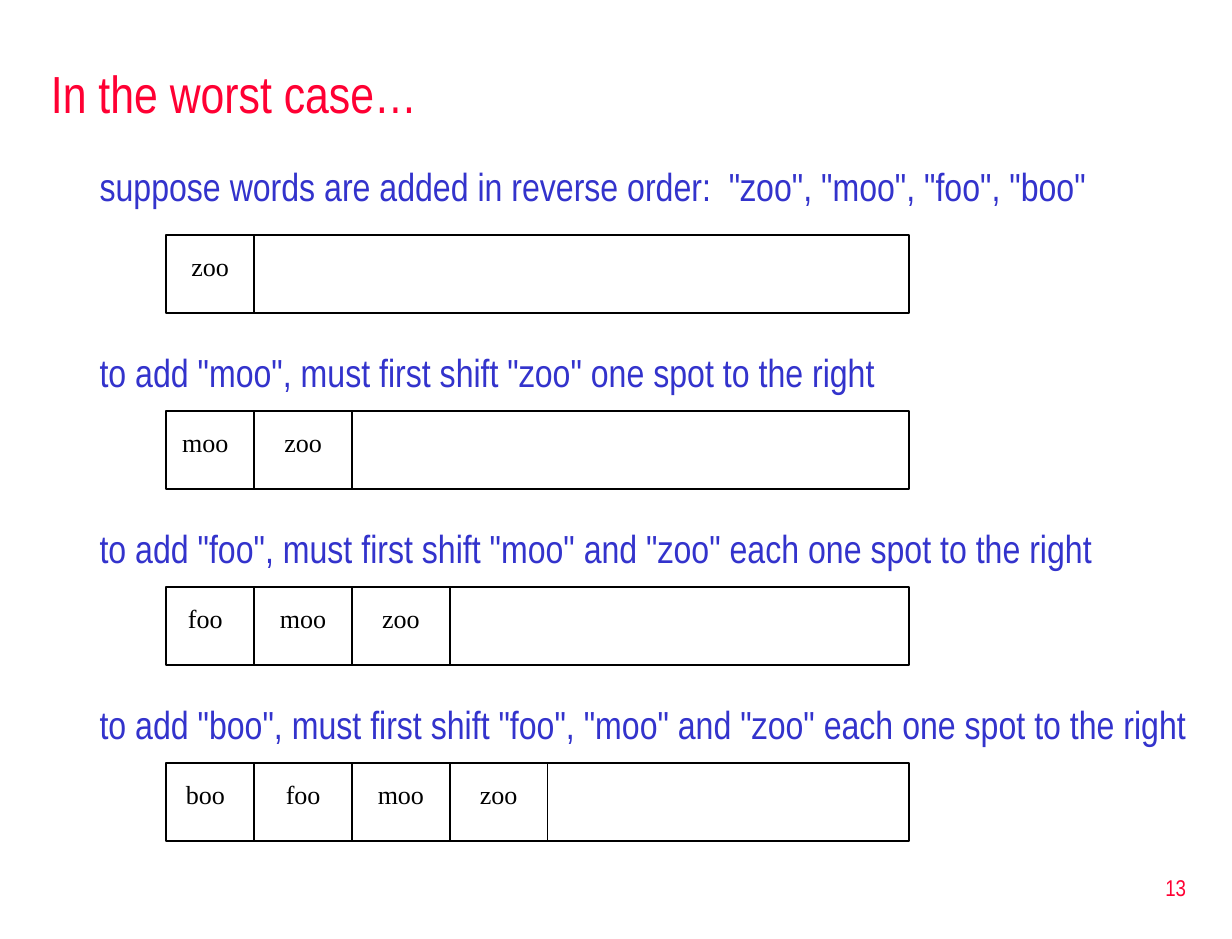
from dataclasses import dataclass

from lxml import etree
from pptx import Presentation
from pptx.dml.color import RGBColor
from pptx.enum.shapes import MSO_CONNECTOR, MSO_SHAPE
from pptx.enum.text import MSO_ANCHOR, PP_ALIGN
from pptx.oxml.ns import qn
from pptx.util import Emu, Pt

LEFT, MID, RIGHT = PP_ALIGN.LEFT, PP_ALIGN.CENTER, PP_ALIGN.RIGHT
TOP, CENTRE = MSO_ANCHOR.TOP, MSO_ANCHOR.MIDDLE
RECT, LINE = MSO_SHAPE.RECTANGLE, MSO_CONNECTOR.STRAIGHT
TITLE_ONLY = 5
SCALE = 9525  # EMU in one px, 96 px to the inch


@dataclass(frozen=True)
class Theme:
    red: str = "FF0033"
    blue: str = "3333CC"
    black: str = "000000"
    sans: str = "Arial Narrow"
    serif: str = "Times New Roman"
    head: int = 32
    body: int = 24
    cell: int = 16
    note: int = 14
    rule: int = 1


THEME = Theme()
BAR_X, BAR_W, BAR_H = 136, 608, 64
FIRST, PITCH = 72, 80  # width of the first cell, then of the others

# top of caption, top of bar, caption, words in the bar
STEPS = [
    (128, 192, 'suppose words are added in reverse order:  "zoo", "moo", "foo", "boo"',
     ["zoo"]),
    (280, 336, 'to add "moo", must first shift "zoo" one spot to the right',
     ["moo", "zoo"]),
    (424, 480, 'to add "foo", must first shift "moo" and "zoo" each one spot to the right',
     ["foo", "moo", "zoo"]),
    (568, 624, 'to add "boo", must first shift "foo", "moo" and "zoo" each one spot to the right',
     ["boo", "foo", "moo", "zoo"]),
]


def px(*sizes):
    return [Emu(size * SCALE) for size in sizes]


def write(shape, text, size=THEME.body, color=THEME.blue, font=THEME.sans,
          align=LEFT, anchor=TOP):
    frame = shape.text_frame
    frame.word_wrap = True
    frame.vertical_anchor = anchor
    frame.text = text
    para = frame.paragraphs[0]
    para.alignment = align
    style = para.runs[0].font
    style.size, style.name = Pt(size), font
    style.color.rgb = RGBColor.from_string(color)


def add_text(slide, box, text, **style):
    write(slide.shapes.add_textbox(*px(*box)), text, **style)


def add_title(slide, text):
    title = slide.shapes.title
    title.left, title.top, title.width, title.height = px(32, 40, 952, 72)
    write(title, text, size=THEME.head, color=THEME.red, anchor=CENTRE)


def ink(line):
    line.color.rgb = RGBColor.from_string(THEME.black)
    line.width = Pt(THEME.rule)


def add_split(slide, x, y):
    """Draw the upright line that closes a cell."""
    split = slide.shapes.add_connector(LINE, *px(x, y, x, y + BAR_H))
    ink(split.line)
    etree.SubElement(split._element.spPr, qn("a:effectLst"))


def add_bar(slide, y, words):
    """Draw an array whose first cells hold the words."""
    bar = slide.shapes.add_shape(RECT, *px(BAR_X, y, BAR_W, BAR_H))
    bar.fill.background()
    bar.shadow.inherit = False
    ink(bar.line)
    for i, word in enumerate(words):
        width = FIRST if len(words) == 1 else 64
        add_split(slide, BAR_X + FIRST + i * PITCH, y)
        add_text(slide, (BAR_X + i * PITCH, y + 8, width, 35), word,
                 size=THEME.cell, color=THEME.black, font=THEME.serif, align=MID)


def main():
    deck = Presentation()
    deck.slide_width, deck.slide_height = px(1008, 768)
    slide = deck.slides.add_slide(deck.slide_layouts[TITLE_ONLY])
    add_title(slide, "In the worst case…")
    for text_y, bar_y, text, words in STEPS:
        add_text(slide, (72, text_y, 914, 48), text)
        add_bar(slide, bar_y, words)
    add_text(slide, (770, 700, 210, 51), "13", size=THEME.note,
             color=THEME.red, align=RIGHT, anchor=CENTRE)
    deck.save("out.pptx")


if __name__ == "__main__":
    main()
